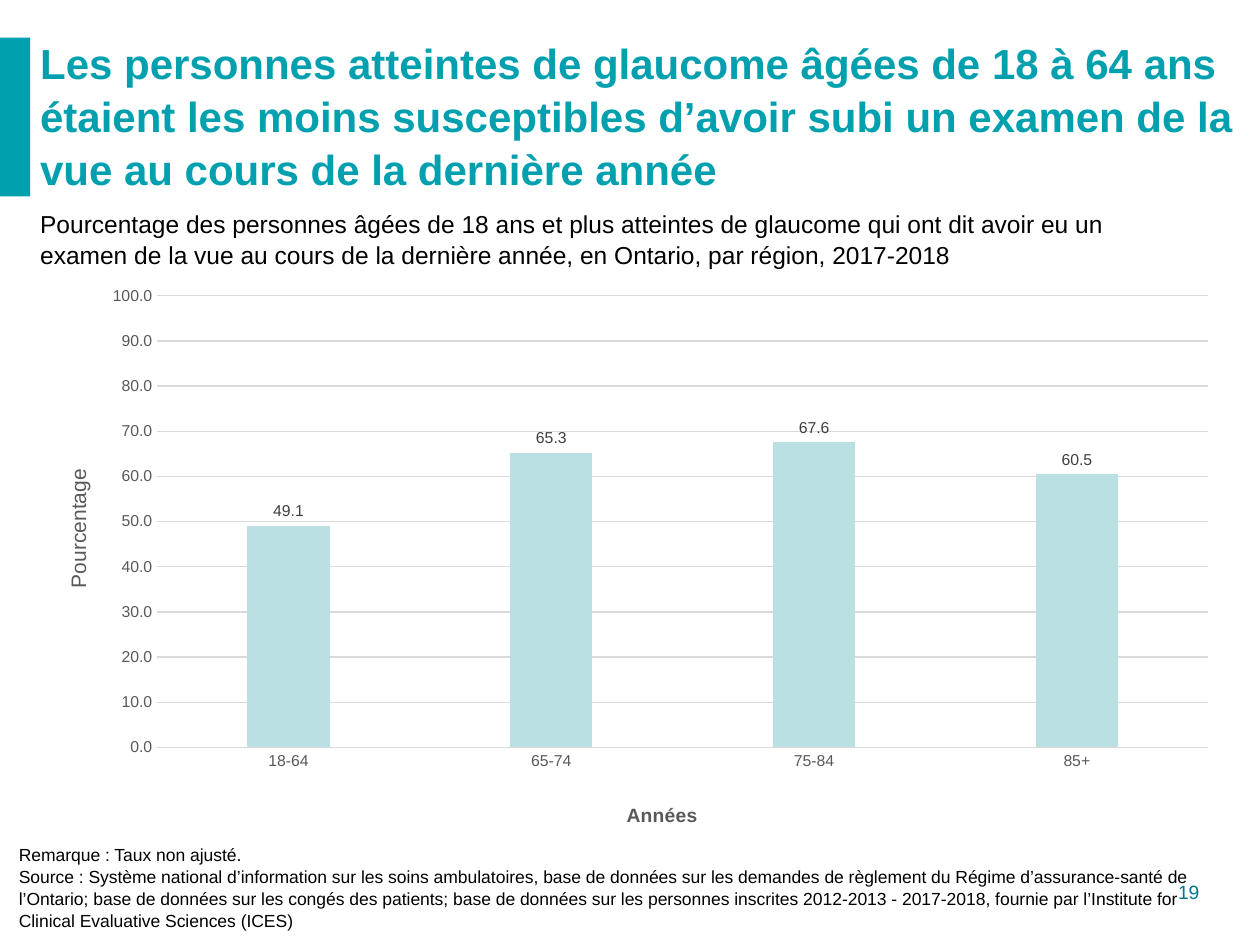
from lxml.etree import SubElement
from pptx import Presentation
from pptx.chart.data import CategoryChartData
from pptx.dml.color import RGBColor
from pptx.enum.chart import XL_CHART_TYPE, XL_LABEL_POSITION, XL_TICK_MARK
from pptx.enum.shapes import MSO_SHAPE
from pptx.enum.text import MSO_ANCHOR, PP_ALIGN
from pptx.oxml.ns import qn
from pptx.util import Cm, Pt


def style(font, size, color, bold=False):
    font.name = "Arial"
    font.size = Pt(size)
    font.bold = bold
    font.color.rgb = RGBColor.from_string(color)


def place(part, **fractions):
    """Fix a chart part by fractions of the chart's width and height."""
    layout = part.find(qn("c:layout"))
    if layout is None:
        layout = SubElement(part, qn("c:layout"))
        part.insert(0 if part.find(qn("c:tx")) is None else 1, layout)
    manual = SubElement(layout, qn("c:manualLayout"))
    if "w" in fractions:
        SubElement(manual, qn("c:layoutTarget")).set("val", "inner")
    for side in "xy":
        SubElement(manual, qn(f"c:{side}Mode")).set("val", "edge")
    for key, fraction in fractions.items():
        SubElement(manual, qn(f"c:{key}")).set("val", str(fraction))


prs = Presentation()
prs.slide_width, prs.slide_height = Cm(25.4), Cm(19.05)
slide = prs.slides.add_slide(prs.slide_layouts[6])

accent = slide.shapes.add_shape(MSO_SHAPE.RECTANGLE, 0, Cm(0.76), Cm(0.61), Cm(3.2))
accent.shadow.inherit = False
accent.fill.solid()
accent.fill.fore_color.rgb = RGBColor.from_string("00A0AF")
accent.line.fill.background()

# Chart
rates = CategoryChartData(number_format="0.0")
rates.categories = ["18-64", "65-74", "75-84", "85+"]
rates.add_series("Pourcentage", [49.1, 65.3, 67.6, 60.5])
chart = slide.shapes.add_chart(
    XL_CHART_TYPE.COLUMN_CLUSTERED, Cm(0.76), Cm(5.51), Cm(24.08), Cm(11.38), rates
).chart
style(chart.font, 10, "000000")
chart.has_legend = False
chart.has_title = False

columns = chart.plots[0]
columns.gap_width = 219
columns.overlap = -27
columns.vary_by_categories = False
bars = columns.series[0]
bars.format.fill.solid()
bars.format.fill.fore_color.rgb = RGBColor.from_string("BBE0E3")
labels = bars.data_labels
labels.show_value = True
labels.position = XL_LABEL_POSITION.OUTSIDE_END
labels.number_format = "0.0"
labels.number_format_is_linked = False
style(labels.font, 9, "404040")

ages, percent = chart.category_axis, chart.value_axis
for axis, caption, size, bold, x, y in [
    (ages, "Années", 11, True, 0.49, 0.93),
    (percent, "Pourcentage", 12, False, 0.02, 0.34),
]:
    axis.major_tick_mark = axis.minor_tick_mark = XL_TICK_MARK.NONE
    style(axis.tick_labels.font, 9, "595959")
    run = axis.axis_title.text_frame.paragraphs[0].add_run()
    run.text = caption
    style(run.font, size, "595959", bold)
    place(axis.axis_title._element, x=x, y=y)

percent.minimum_scale, percent.maximum_scale, percent.major_unit = 0, 100, 10
percent.tick_labels.number_format = "0.0"
percent.tick_labels.number_format_is_linked = False
percent.format.line.fill.background()
for line in (ages.format.line, percent.major_gridlines.format.line):
    line.color.rgb = RGBColor.from_string("D9D9D9")
    line.width = Pt(0.75)

place(chart._chartSpace.chart.plotArea, x=0.1, y=0.04, w=0.88, h=0.8)

# Texts: box in cm, size, colour, bold, alignment, anchor, paragraphs
for box, size, color, bold, align, anchor, paragraphs in [
    ((0.56, 0.64, 24.84, 3.33), 24, "00A0AF", True, PP_ALIGN.LEFT, MSO_ANCHOR.MIDDLE, [
        "Les personnes atteintes de glaucome âgées de 18 à 64 ans étaient les moins "
        "susceptibles d’avoir subi un examen de la vue au cours de la dernière année"]),
    ((0.56, 4.06, 23.6, 1.45), 14, "000000", False, PP_ALIGN.LEFT, MSO_ANCHOR.TOP, [
        "Pourcentage des personnes âgées de 18 ans et plus atteintes de glaucome qui ont "
        "dit avoir eu un examen de la vue au cours de la dernière année, en Ontario, "
        "par région, 2017-2018"]),
    ((0.13, 16.87, 24.46, 1.55), 10, "000000", False, PP_ALIGN.LEFT, MSO_ANCHOR.TOP, [
        "Remarque : Taux non ajusté.",
        "Source : Système national d’information sur les soins ambulatoires, base de "
        "données sur les demandes de règlement du Régime d’assurance-santé de l’Ontario; "
        "base de données sur les congés des patients; base de données sur les personnes "
        "inscrites 2012-2013 - 2017-2018, fournie par l’Institute for Clinical "
        "Evaluative Sciences (ICES)"]),
    ((21.46, 17.6, 2.97, 0.74), 11, "00788A", False, PP_ALIGN.RIGHT, MSO_ANCHOR.MIDDLE, ["19"]),
]:
    frame = slide.shapes.add_textbox(*map(Cm, box)).text_frame
    frame.word_wrap = True
    frame.vertical_anchor = anchor
    for number, text in enumerate(paragraphs):
        paragraph = frame.add_paragraph() if number else frame.paragraphs[0]
        paragraph.alignment = align
        paragraph.line_spacing = 1.05
        run = paragraph.add_run()
        run.text = text
        style(run.font, size, color, bold)

prs.save("out.pptx")
